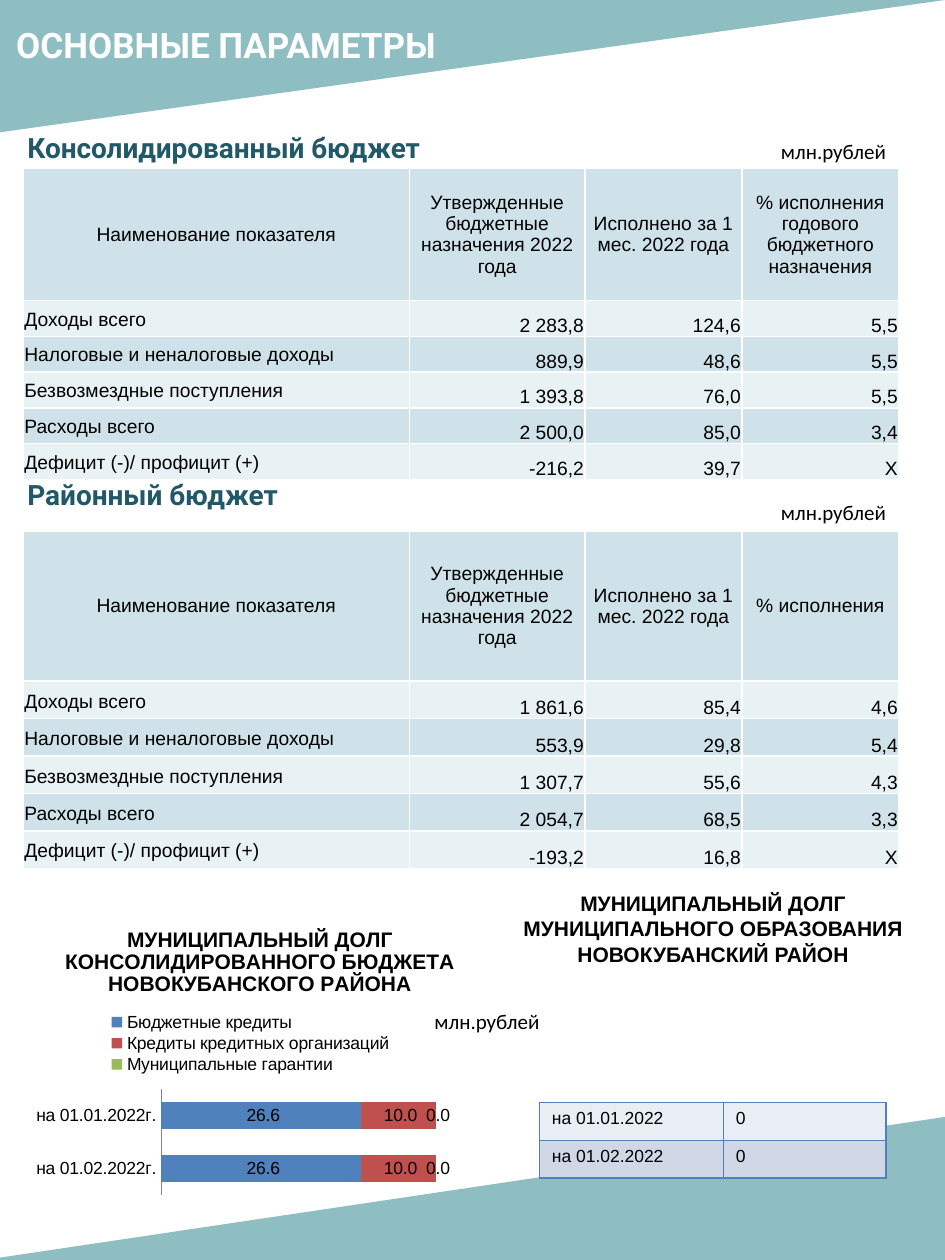
"""Build the budget parameters slide with two tables, a debt table and a chart."""
from dataclasses import dataclass

from lxml import etree
from pptx import Presentation
from pptx.chart.data import CategoryChartData
from pptx.dml.color import RGBColor
from pptx.enum.chart import XL_CHART_TYPE, XL_LEGEND_POSITION, XL_TICK_LABEL_POSITION, XL_TICK_MARK
from pptx.enum.shapes import MSO_SHAPE
from pptx.enum.text import MSO_ANCHOR, MSO_AUTO_SIZE, PP_ALIGN
from pptx.oxml import parse_xml
from pptx.oxml.ns import nsdecls, qn
from pptx.util import Pt

LEFT, MID, RIGHT = PP_ALIGN.LEFT, PP_ALIGN.CENTER, PP_ALIGN.RIGHT
TOP, CENTER, BOTTOM = MSO_ANCHOR.TOP, MSO_ANCHOR.MIDDLE, MSO_ANCHOR.BOTTOM
GROW = MSO_AUTO_SIZE.SHAPE_TO_FIT_TEXT
WEDGE = MSO_SHAPE.RIGHT_TRIANGLE
STACK = XL_CHART_TYPE.BAR_STACKED
ABOVE = XL_LEGEND_POSITION.TOP
BESIDE = XL_TICK_LABEL_POSITION.NEXT_TO_AXIS
NONE = XL_TICK_MARK.NONE


@dataclass(frozen=True)
class Theme:
    teal: str = "519AA0"
    deep: str = "215968"
    white: str = "FFFFFF"
    black: str = "000000"
    grey: str = "868686"
    bands: tuple = ("CFE2EA", "E8F1F4")
    debt: tuple = ("E9EDF4", "D0D8E8")
    bars: tuple = ("4F81BD", "C0504D", "9BBB59")
    big: int = 20
    head: int = 16
    note: int = 12
    cell: int = 11
    small: int = 10


theme = Theme()


def write(frame, text, size, font="Arial", color=theme.black, bold=False, align=LEFT):
    para = frame.paragraphs[0]
    para.alignment = align
    run = para.add_run()
    run.text = text
    run.font.name = font
    run.font.size = Pt(size)
    run.font.bold = bold
    run.font.color.rgb = RGBColor.from_string(color)


def paint(cell, fill, edge, width):
    cell.fill.solid()
    cell.fill.fore_color.rgb = RGBColor.from_string(fill)
    props = cell._tc.get_or_add_tcPr()
    for spot, side in enumerate(("lnL", "lnR", "lnT", "lnB")):
        line = parse_xml(f'<a:{side} {nsdecls("a")} w="{Pt(width)}"><a:solidFill>'
                         f'<a:srgbClr val="{edge}"/></a:solidFill></a:{side}>')
        props.insert(spot, line)


deck = Presentation()
deck.slide_width, deck.slide_height = Pt(540), Pt(720)
slide = deck.slides.add_slide(deck.slide_layouts[6])
shapes = slide.shapes

for x, y, w, h, flip in ((0, 0, 540, 75.6, "flipH"), (-9.4, 638, 550.8, 82, "flipV")):
    wedge = shapes.add_shape(WEDGE, Pt(x), Pt(y), Pt(w), Pt(h))
    wedge.shadow.inherit = False
    wedge.rotation = 180
    wedge.element.spPr.find(qn("a:xfrm")).set(flip, "1")
    wedge.fill.solid()
    wedge.fill.fore_color.rgb = RGBColor.from_string(theme.teal)
    tint = wedge.element.spPr.find(qn("a:solidFill"))[0]
    etree.SubElement(tint, qn("a:alpha")).set("val", "64000")
    wedge.line.fill.background()

heads = (
    ("ОСНОВНЫЕ ПАРАМЕТРЫ", 2.2, 10, 31, theme.big, theme.white),
    ("Консолидированный бюджет", 8.6, 70.9, 26, theme.head, theme.deep),
    ("Районный бюджет", 8.6, 269.3, 26, theme.head, theme.deep),
)
for text, x, y, h, size, color in heads:
    frame = shapes.add_textbox(Pt(x), Pt(y), Pt(350.6), Pt(h)).text_frame
    frame.word_wrap = True
    frame.auto_size = GROW
    write(frame, text, size, "Roboto", color, True)

for x, y in ((439.2, 75.6), (439.2, 281.8), (241.2, 573)):
    frame = shapes.add_textbox(Pt(x), Pt(y), Pt(80), Pt(21.6)).text_frame
    frame.word_wrap = False
    frame.auto_size = GROW
    write(frame, "млн.рублей", theme.note, "Calibri")

names = ("Доходы всего", "Налоговые и неналоговые доходы", "Безвозмездные поступления",
         "Расходы всего", "Дефицит (-)/ профицит (+)")
titles = ("Наименование показателя", "Утвержденные бюджетные назначения 2022 года",
          "Исполнено за 1 мес. 2022 года")
whole = (("2 283,8", "124,6", "5,5"), ("889,9", "48,6", "5,5"), ("1 393,8", "76,0", "5,5"),
         ("2 500,0", "85,0", "3,4"), ("-216,2", "39,7", "Х"))
local = (("1 861,6", "85,4", "4,6"), ("553,9", "29,8", "5,4"), ("1 307,7", "55,6", "4,3"),
         ("2 054,7", "68,5", "3,3"), ("-193,2", "16,8", "Х"))
plans = (
    (96.2, 75.6, 20.4, "% исполнения годового бюджетного назначения", whole),
    (303.4, 85.9, 21.4, "% исполнения", local),
)
for y, first, rest, last, sums in plans:
    rows = [titles + (last,)] + [(name,) + row for name, row in zip(names, sums)]
    table = shapes.add_table(6, 4, Pt(13.3), Pt(y), Pt(500.4), Pt(first + 5 * rest)).table
    table.first_row = table.horz_banding = False
    for col, width in zip(table.columns, (220.7, 100.3, 89.7, 89.7)):
        col.width = Pt(width)
    for r, row in enumerate(rows):
        table.rows[r].height = Pt(rest if r else first)
        for c, text in enumerate(row):
            cell = table.cell(r, c)
            tight = r > 0 and c > 0
            cell.margin_left = cell.margin_right = Pt(0.6)
            cell.margin_top = Pt(0.6 if tight else 3.6)
            cell.margin_bottom = Pt(0 if tight else 3.6)
            cell.vertical_anchor = BOTTOM if r else CENTER
            align = RIGHT if tight else LEFT if r else MID
            write(cell.text_frame, text, theme.cell, align=align)
            paint(cell, theme.bands[r % 2], theme.white, 0.96)

frame = shapes.add_textbox(Pt(273.6), Pt(505.4), Pt(267.8), Pt(65.5)).text_frame
frame.word_wrap = True
frame.auto_size = GROW
write(frame, "МУНИЦИПАЛЬНЫЙ ДОЛГ МУНИЦИПАЛЬНОГО ОБРАЗОВАНИЯ НОВОКУБАНСКИЙ РАЙОН",
      theme.note, bold=True, align=MID)

table = shapes.add_table(2, 2, Pt(308.2), Pt(630), Pt(198), Pt(43.2)).table
table.first_row = table.horz_banding = False
for col, width in zip(table.columns, (105.1, 92.9)):
    col.width = Pt(width)
for r, day in enumerate(("на 01.01.2022", "на 01.02.2022")):
    table.rows[r].height = Pt(21.6)
    for c, text in enumerate((day, "0")):
        cell = table.cell(r, c)
        cell.vertical_anchor = TOP
        write(cell.text_frame, text, theme.small)
        paint(cell, theme.debt[r], theme.bars[0], 1)

mask = r"#\ ##0.0"
data = CategoryChartData(number_format=mask)
data.categories = ("на 01.01.2022г.", "на 01.02.2022г.")
data.add_series("Бюджетные кредиты", (26.6, 26.6))
data.add_series("Кредиты кредитных организаций", (10, 10))
data.add_series("Муниципальные гарантии", (0, 0))
chart = shapes.add_chart(STACK, Pt(-9.4), Pt(515.5), Pt(317.5), Pt(194.4), data).chart
chart.font.name = "Arial"
chart.font.size = Pt(theme.small)
chart.font.color.rgb = RGBColor.from_string(theme.black)
chart.has_title = True
write(chart.chart_title.text_frame,
      "МУНИЦИПАЛЬНЫЙ ДОЛГ КОНСОЛИДИРОВАННОГО БЮДЖЕТА НОВОКУБАНСКОГО РАЙОНА",
      theme.note, bold=True, align=MID)
chart.chart_title.include_in_layout = False
chart.has_legend = True
chart.legend.position = ABOVE
chart.legend.include_in_layout = False

axis = chart.category_axis
axis.reverse_order = True
axis.major_tick_mark = axis.minor_tick_mark = NONE
axis.tick_label_position = BESIDE
axis.format.line.color.rgb = RGBColor.from_string(theme.grey)
scale = chart.value_axis
scale.visible = False
scale.has_major_gridlines = False
scale.minimum_scale, scale.maximum_scale = 0, 40

plot = chart.plots[0]
plot.gap_width, plot.overlap = 95, 100
plot.vary_by_categories = False
for part, color in zip(plot.series, theme.bars):
    part.format.fill.solid()
    part.format.fill.fore_color.rgb = RGBColor.from_string(color)
    tags = part.data_labels
    tags.show_value = True
    tags.number_format = mask
    tags.number_format_is_linked = False

root = chart._chartSpace.chart
spots = (("c:title", "", (0.14, 0.06)), ("c:legend", "", (0.21, 0.32, 0.54, 0.19)),
         ("c:plotArea", '<c:layoutTarget val="inner"/>', (0.32, 0.55, 0.54, 0.31)))
for name, goal, box in spots:
    node = root.find(qn(name))
    for old in node.findall(qn("c:layout")):
        node.remove(old)
    body = goal + '<c:xMode val="edge"/><c:yMode val="edge"/>'
    body += "".join(f'<c:{key} val="{val}"/>' for key, val in zip("xywh", box))
    spot = parse_xml(f'<c:layout {nsdecls("c")}><c:manualLayout>{body}</c:manualLayout></c:layout>')
    node.insert(0 if goal else 1, spot)

deck.save("out.pptx")
